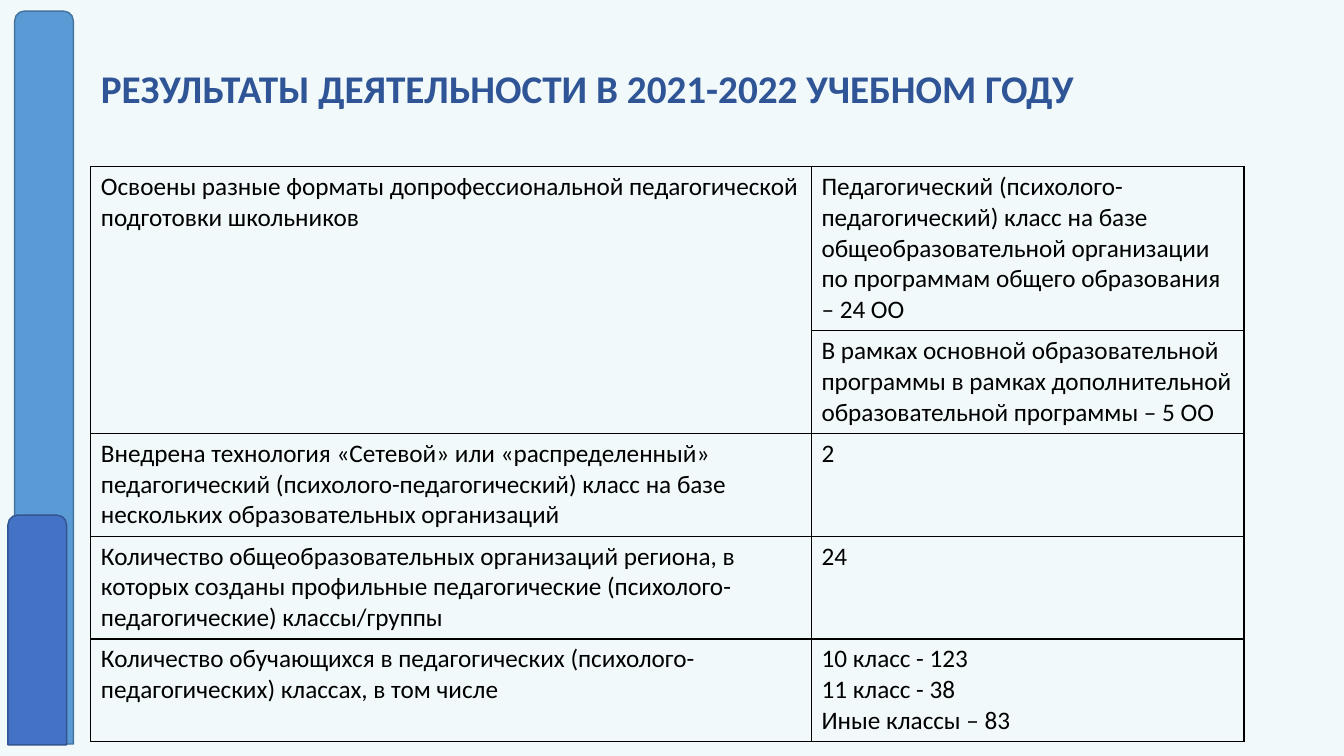
from dataclasses import dataclass

from lxml.etree import SubElement
from pptx import Presentation
from pptx.dml.color import RGBColor
from pptx.enum.shapes import MSO_SHAPE
from pptx.enum.text import MSO_ANCHOR, MSO_AUTO_SIZE, PP_ALIGN
from pptx.oxml.ns import qn
from pptx.util import Cm, Pt


@dataclass(frozen=True)
class Theme:
    font: str = "Calibri"
    title_size: Pt = Pt(28)
    body_size: Pt = Pt(18)
    background: RGBColor = RGBColor(0xF1, 0xF9, 0xFA)
    title: RGBColor = RGBColor(0x2F, 0x55, 0x97)
    text: RGBColor = RGBColor(0, 0, 0)
    long_bar: RGBColor = RGBColor(0x5B, 0x9B, 0xD5)
    long_bar_line: RGBColor = RGBColor(0x43, 0x73, 0x9E)
    short_bar: RGBColor = RGBColor(0x44, 0x72, 0xC4)
    short_bar_line: RGBColor = RGBColor(0x32, 0x54, 0x91)


def set_borders(cell, color, width):
    tc_pr = cell._tc.get_or_add_tcPr()
    for side in ("lnL", "lnR", "lnT", "lnB"):
        ln = SubElement(tc_pr, qn(f"a:{side}"), w=str(width))
        fill = SubElement(ln, qn("a:solidFill"))
        SubElement(fill, qn("a:srgbClr"), val=str(color))


theme = Theme()
prs = Presentation()
prs.slide_width, prs.slide_height = Cm(33.87), Cm(19.05)
s = prs.slides.add_slide(prs.slide_layouts[5])
s.background.fill.solid()
s.background.fill.fore_color.rgb = theme.background

# Title
title = s.shapes.title
title.left, title.top, title.width, title.height = Cm(2.29), Cm(1.45), Cm(30.96), Cm(1.68)
tf = title.text_frame
tf.text = "РЕЗУЛЬТАТЫ ДЕЯТЕЛЬНОСТИ В 2021-2022 УЧЕБНОМ ГОДУ"
tf.auto_size = MSO_AUTO_SIZE.NONE
tf.vertical_anchor = MSO_ANCHOR.MIDDLE
tf.margin_left = tf.margin_right = tf.margin_top = tf.margin_bottom = Cm(0.25)
p = tf.paragraphs[0]
p.alignment = PP_ALIGN.LEFT
p.line_spacing = 0.9
p.font.name, p.font.size, p.font.bold = theme.font, theme.title_size, True
p.font.color.rgb = theme.title

# Results table
results = [
    ("Освоены разные форматы допрофессиональной педагогической подготовки школьников",
     "Педагогический (психолого-педагогический) класс на базе общеобразовательной "
     "организации по программам общего образования – 24 ОО"),
    ("",
     "В рамках основной образовательной программы в рамках дополнительной "
     "образовательной программы – 5 ОО"),
    ("Внедрена технология «Сетевой» или «распределенный» педагогический "
     "(психолого-педагогический) класс на базе нескольких образовательных организаций",
     "2"),
    ("Количество общеобразовательных организаций региона, в которых созданы "
     "профильные педагогические (психолого-педагогические) классы/группы",
     "24"),
    ("Количество обучающихся в педагогических (психолого-педагогических) классах, "
     "в том числе",
     "10 класс - 123\n11 класс - 38\nИные классы – 83"),
]
column_widths = (Cm(18.16), Cm(10.9))
row_heights = (Cm(4.13),) + (Cm(2.59),) * 4
table = s.shapes.add_table(len(results), 2, Cm(2.29), Cm(4.2),
                           sum(column_widths), sum(row_heights)).table
table.first_row = table.horz_banding = False
for column, width in zip(table.columns, column_widths):
    column.width = width
for row, height, texts in zip(table.rows, row_heights, results):
    row.height = height
    for cell, text in zip(row.cells, texts):
        set_borders(cell, theme.text, Pt(1))
        cell.fill.background()
        cell.text = text
        for p in cell.text_frame.paragraphs:
            p.font.name, p.font.size = theme.font, theme.body_size
            p.font.color.rgb = theme.text
table.cell(0, 0).merge(table.cell(1, 0))

# Side bars
for left, top, height, fill, line in (
    (Cm(0.37), Cm(0.28), Cm(18.47), theme.long_bar, theme.long_bar_line),
    (Cm(0.2), Cm(12.98), Cm(5.79), theme.short_bar, theme.short_bar_line),
):
    sp = s.shapes.add_shape(MSO_SHAPE.ROUND_2_SAME_RECTANGLE, left, top, Cm(1.48), height)
    sp.shadow.inherit = False
    sp.fill.solid()
    sp.fill.fore_color.rgb = fill
    sp.line.color.rgb = line
    sp.line.width = Pt(1)

prs.save("out.pptx")
